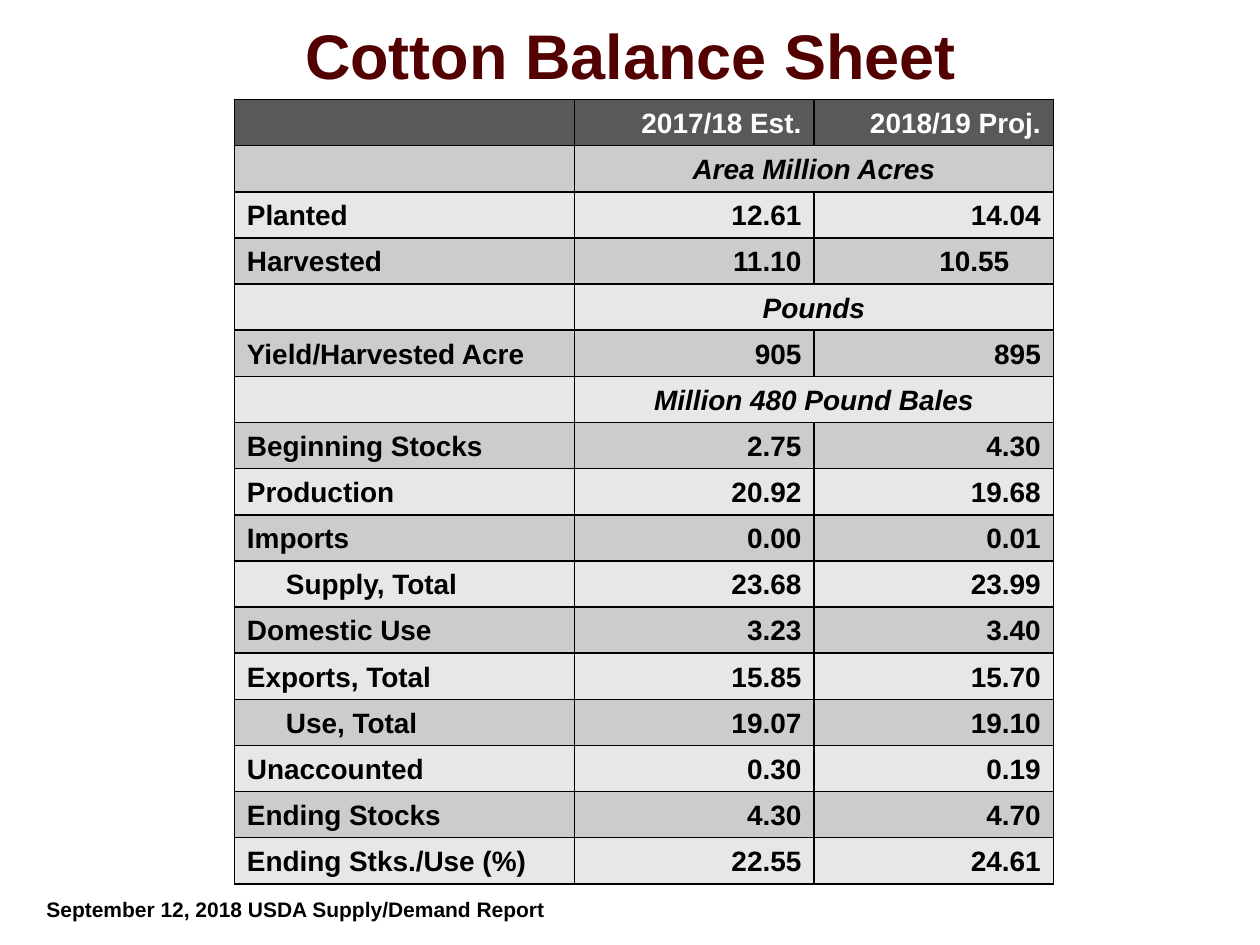
from dataclasses import dataclass

from lxml.etree import SubElement
from pptx import Presentation
from pptx.dml.color import RGBColor
from pptx.enum.text import MSO_ANCHOR, PP_ALIGN
from pptx.oxml.ns import qn
from pptx.util import Inches, Pt

COLORS = {
    "title": "520000",
    "header": "595959",
    "header_text": "FFFFFF",
    "dark_band": "CCCCCC",
    "light_band": "E7E7E7",
    "text": "000000",
    "border": "000000",
}
COLUMN_WIDTHS = (2.7, 1.9, 1.9)
CELL_MARGIN = 0.1


@dataclass
class Row:
    label: str = ""
    estimate: str = ""
    projection: str = ""
    unit: str = ""
    label_indent: float = 0
    projection_indent: float = 0


ROWS = [
    Row("", "2017/18 Est.", "2018/19 Proj."),
    Row(unit="Area Million Acres"),
    Row("Planted", "12.61", "14.04"),
    Row("Harvested", "11.10", "10.55", projection_indent=0.25),
    Row(unit="Pounds"),
    Row("Yield/Harvested Acre", "905", "895"),
    Row(unit="Million 480 Pound Bales"),
    Row("Beginning Stocks", "2.75", "4.30"),
    Row("Production", "20.92", "19.68"),
    Row("Imports", "0.00", "0.01"),
    Row("Supply, Total", "23.68", "23.99", label_indent=0.31),
    Row("Domestic Use", "3.23", "3.40"),
    Row("Exports, Total", "15.85", "15.70"),
    Row("Use, Total", "19.07", "19.10", label_indent=0.31),
    Row("Unaccounted", "0.30", "0.19"),
    Row("Ending Stocks", "4.30", "4.70"),
    Row("Ending Stks./Use (%)", "22.55", "24.61"),
]


def write(frame, text: str, size: int, color: str, align=PP_ALIGN.LEFT,
          italic: bool = False, spacing: float = 1.0) -> None:
    para = frame.paragraphs[0]
    para.alignment = align
    para.line_spacing = spacing
    span = para.add_run()
    span.text = text
    values = {"name": "Arial", "size": Pt(size), "bold": True, "italic": italic}
    for name, value in values.items():
        setattr(span.font, name, value)
    span.font.color.rgb = RGBColor.from_string(COLORS[color])


def place(shape, left: float, top: float, width: float, height: float) -> None:
    for name, value in zip(("left", "top", "width", "height"),
                           (left, top, width, height)):
        setattr(shape, name, Inches(value))


def style_cell(cell, fill: str) -> None:
    # No top margin, so that empty cells do not stretch their row
    values = {"margin_left": Inches(CELL_MARGIN), "margin_right": Inches(CELL_MARGIN),
              "margin_top": 0, "margin_bottom": Inches(0.05),
              "vertical_anchor": MSO_ANCHOR.BOTTOM}
    for name, value in values.items():
        setattr(cell, name, value)
    properties = cell._tc.get_or_add_tcPr()
    for side in ("a:lnL", "a:lnR", "a:lnT", "a:lnB"):
        line = SubElement(properties, qn(side), w=str(Pt(1)))
        solid = SubElement(line, qn("a:solidFill"))
        SubElement(solid, qn("a:srgbClr"), val=COLORS["border"])
    cell.fill.solid()
    cell.fill.fore_color.rgb = RGBColor.from_string(COLORS[fill])


def fill_row(table, index: int, row: Row) -> None:
    cells = [table.cell(index, column) for column in range(len(COLUMN_WIDTHS))]
    band = "header" if index == 0 else "dark_band" if index % 2 else "light_band"
    color = "header_text" if index == 0 else "text"
    for cell in cells:
        style_cell(cell, band)
    if row.unit:
        cells[1].merge(cells[2])
        write(cells[1].text_frame, row.unit, 16, color, PP_ALIGN.CENTER, italic=True)
        return
    cells[0].margin_left = Inches(CELL_MARGIN + row.label_indent)
    cells[2].margin_right = Inches(CELL_MARGIN + row.projection_indent)
    aligns = (PP_ALIGN.LEFT, PP_ALIGN.RIGHT, PP_ALIGN.RIGHT)
    for cell, text, align in zip(cells, (row.label, row.estimate, row.projection), aligns):
        if text:
            write(cell.text_frame, text, 16, color, align)


def main() -> None:
    deck = Presentation()
    deck.slide_width, deck.slide_height = Inches(10), Inches(7.5)
    page = deck.slides.add_slide(deck.slide_layouts[5])

    # Title
    title = page.shapes.title
    place(title, 0.17, -0.05, 9.67, 1.05)
    title.text_frame.vertical_anchor = MSO_ANCHOR.MIDDLE
    write(title.text_frame, "Cotton Balance Sheet", 36, "title",
          PP_ALIGN.CENTER, spacing=0.85)

    # Balance sheet
    table = page.shapes.add_table(len(ROWS), len(COLUMN_WIDTHS), Inches(1.86),
                                  Inches(0.79), Inches(6.5), Inches(6.23)).table
    for column, width in zip(table.columns, COLUMN_WIDTHS):
        column.width = Inches(width)
    for index, row in enumerate(ROWS):
        fill_row(table, index, row)

    # Source line
    box = page.shapes.add_textbox(0, 0, 0, 0)
    place(box, 0.27, 7.1, 4.23, 0.27)
    box.text_frame.word_wrap = True
    write(box.text_frame, "September 12, 2018 USDA Supply/Demand Report", 12,
          "text", spacing=0.85)

    deck.save("out.pptx")


if __name__ == "__main__":
    main()
